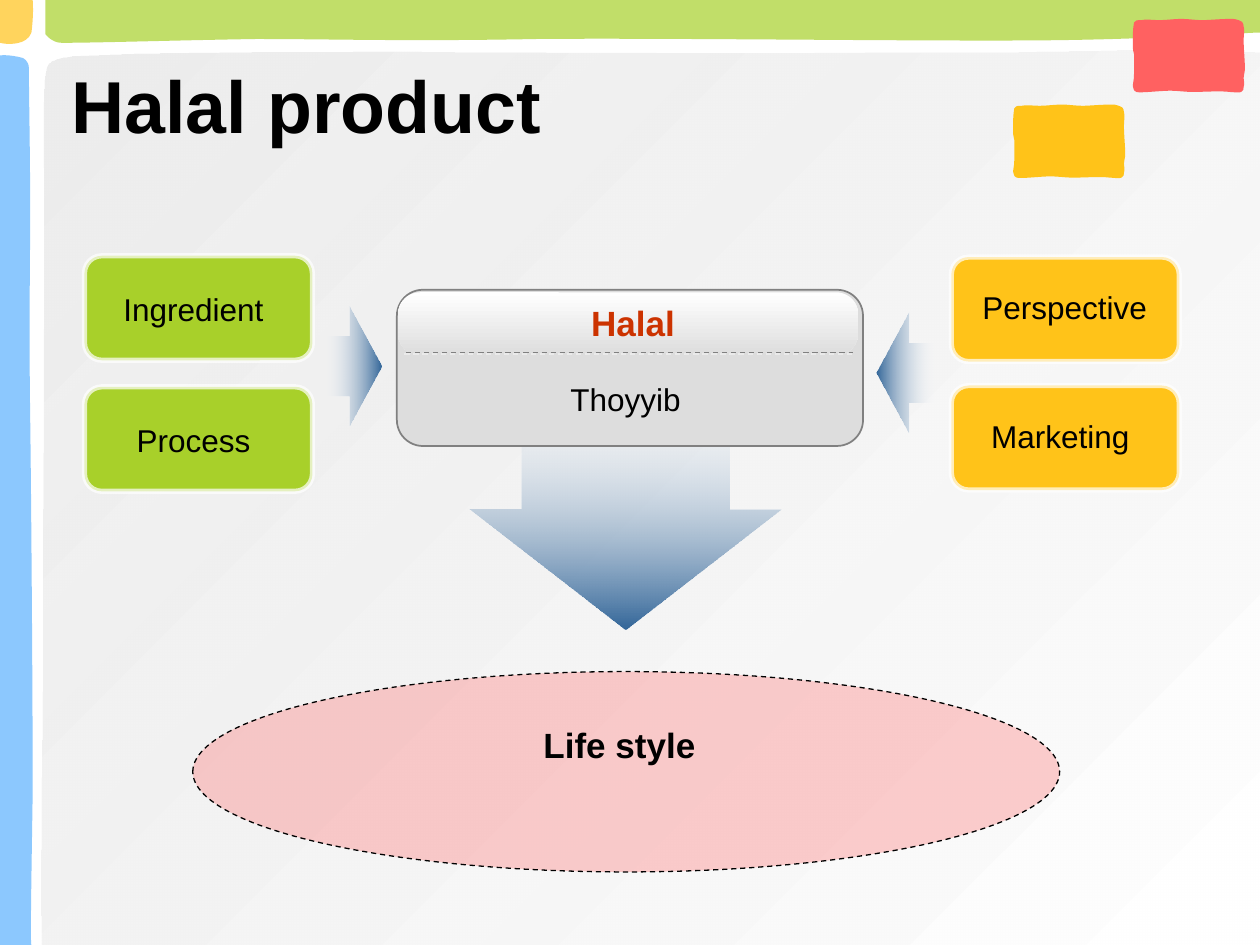
import lxml.etree
import pptx
import pptx.dml.color
import pptx.enum.dml
import pptx.enum.shapes
import pptx.enum.text
import pptx.oxml
import pptx.oxml.ns
import pptx.util

Inches = pptx.util.Inches
RGB = pptx.dml.color.RGBColor
SHAPE = pptx.enum.shapes.MSO_SHAPE
DASH = pptx.enum.dml.MSO_LINE.DASH
ANCHOR = pptx.enum.text.MSO_ANCHOR
ALIGN = pptx.enum.text.PP_ALIGN
qn = pptx.oxml.ns.qn

BLACK, WHITE = RGB(0, 0, 0), RGB(255, 255, 255)
GREEN, AMBER = RGB(0xA8, 0xD0, 0x2A), RGB(0xFF, 0xC3, 0x19)
SKY, CORAL = RGB(0x5C, 0xB1, 0xFE), RGB(0xFF, 0x61, 0x61)
NAVY, RED = RGB(0x33, 0x66, 0x99), RGB(0xCC, 0x33, 0)
MIST, SILVER = RGB(0xE6, 0xE6, 0xE6), RGB(0xDD, 0xDD, 0xDD)
GRAY, PALE = RGB(0x80, 0x80, 0x80), RGB(0xEA, 0xEA, 0xEA)

# Outlines in inches: pairs are corners, sixes are Bezier curves
PANEL = [(10, 7.5), (10, 0.42), (8.86, 0.38, 8.55, 0.42, 7.6, 0.42),
         (6.66, 0.42, 5.5, 0.43, 4.33, 0.42), (3.16, 0.41, 1.23, 0.41, 0.57, 0.45),
         (0.36, 0.48, 0.36, 0.49, 0.35, 0.73), (0.34, 0.96, 0.35, 1.1, 0.35, 1.82),
         (0.35, 2.56, 0.34, 4.12, 0.34, 5.06), (0.34, 6.01, 0.32, 6.62, 0.33, 7.5)]
TOP_BAND = [(10, 0), (10, 0.26), (10.01, 0.25, 9.28, 0.31, 8.32, 0.32),
            (7.36, 0.33, 5.31, 0.3, 4.26, 0.31), (3.21, 0.33, 2.65, 0.31, 2.03, 0.31),
            (1.4, 0.32, 0.77, 0.34, 0.49, 0.34), (0.41, 0.34, 0.36, 0.27, 0.36, 0.27),
            (0.36, 0.27, 0.36, 0.14, 0.36, 0)]
LEFT_BAND = [(0, 7.5), (0.25, 7.5), (0.24, 7.5, 0.25, 6.98, 0.26, 6.28),
             (0.26, 5.58, 0.25, 4.07, 0.24, 3.3), (0.23, 2.54, 0.24, 2.12, 0.24, 1.67),
             (0.24, 1.21, 0.23, 0.75, 0.23, 0.54), (0.23, 0.48, 0.18, 0.46, 0.18, 0.46),
             (0.07, 0.43, 0, 0.44, 0, 0.44)]
CORNER = [(0, 0), (0.26, 0), (0.27, 0.12, 0.25, 0.26, 0.25, 0.26),
          (0.23, 0.31, 0.19, 0.33, 0.15, 0.34), (0.07, 0.36, 0, 0.34, 0, 0.34)]
NOTE = [(0.01, 0.03), (0.02, 0.01, 0.03, 0.01, 0.07, 0.01),
        (0.1, 0, 0.16, 0.01, 0.21, 0.01), (0.26, 0.01, 0.33, 0, 0.39, 0),
        (0.44, 0, 0.5, 0.01, 0.55, 0.01), (0.6, 0.01, 0.7, 0, 0.77, 0),
        (0.8, 0, 0.82, 0, 0.84, 0.01), (0.86, 0.01, 0.88, 0.03, 0.88, 0.06),
        (0.89, 0.09, 0.88, 0.12, 0.88, 0.17), (0.88, 0.23, 0.89, 0.34, 0.89, 0.39),
        (0.89, 0.43, 0.88, 0.44, 0.88, 0.47), (0.88, 0.49, 0.89, 0.52, 0.88, 0.54),
        (0.88, 0.56, 0.88, 0.57, 0.86, 0.58), (0.84, 0.59, 0.8, 0.58, 0.77, 0.58),
        (0.7, 0.57, 0.55, 0.58, 0.48, 0.58), (0.42, 0.58, 0.35, 0.57, 0.3, 0.57),
        (0.22, 0.57, 0.06, 0.59, 0.03, 0.58), (0, 0.57, 0.01, 0.55, 0, 0.53),
        (0, 0.51, 0.01, 0.49, 0.01, 0.44), (0.01, 0.4, 0.01, 0.32, 0.01, 0.28),
        (0, 0.24, 0, 0.23, 0, 0.2), (0, 0.14, 0, 0.08, 0.01, 0.03)]


def set_alpha(color_el, percent):
    if percent < 100:
        lxml.etree.SubElement(color_el, qn("a:alpha")).set("val", str(percent * 1000))


def paint(sp, color, alpha=100):
    sp.shadow.inherit = False
    sp.line.fill.background()
    sp.fill.solid()
    sp.fill.fore_color.rgb = color
    set_alpha(sp._element.spPr.find(qn("a:solidFill"))[0], alpha)


def paint_gradient(sp, start, end, angle):
    """Fill from start to end, each a (colour, alpha) pair; angle runs clockwise."""
    paint(sp, start[0])
    sp.fill.gradient()
    sp.fill.gradient_angle = 360 - angle
    for stop, (color, alpha) in zip(sp.fill.gradient_stops, (start, end)):
        stop.color.rgb = color
    for el, (color, alpha) in zip(sp._element.spPr.iter(qn("a:srgbClr")), (start, end)):
        set_alpha(el, alpha)


def outline(line, color, width, alpha=100, dash=None):
    line.color.rgb = color
    line.width = pptx.util.Pt(width)
    set_alpha(line._ln.find(qn("a:solidFill"))[0], alpha)
    if dash:
        line.dash_style = dash


def add_shape(slide, kind, box, *adjustments):
    sp = slide.shapes.add_shape(kind, *map(Inches, box))
    for i, value in enumerate(adjustments):
        sp.adjustments[i] = value
    return sp


def add_text(slide, box, text, size, color=BLACK, bold=False, align=ALIGN.CENTER,
             anchor=ANCHOR.TOP, wrap=True):
    tf = slide.shapes.add_textbox(*map(Inches, box)).text_frame
    tf.word_wrap = wrap
    tf.vertical_anchor = anchor
    p = tf.paragraphs[0]
    p.alignment = align
    r = p.add_run()
    r.text = text
    r.font.name, r.font.size, r.font.bold = "Arial", pptx.util.Pt(size), bold
    r.font.color.rgb = color


def add_outline(slide, x, y, segments):
    """Draw a closed outline with its origin at x, y, bending the curved sides."""
    corners = [(Inches(x + seg[-2]), Inches(y + seg[-1])) for seg in segments]
    fb = slide.shapes.build_freeform(*corners[0], scale=1.0)
    fb.add_line_segments(corners[1:], close=True)
    sp = fb.convert_to_shape()
    for side, seg in zip(list(sp._element.iter(qn("a:lnTo"))), segments[1:]):
        if len(seg) == 6:
            curve = lxml.etree.Element(qn("a:cubicBezTo"))
            for px, py in zip(seg[::2], seg[1::2]):
                lxml.etree.SubElement(curve, qn("a:pt"), x=str(Inches(x + px) - sp.left),
                                      y=str(Inches(y + py) - sp.top))
            side.getparent().replace(side, curve)
    return sp


def add_frame(slide, x, y):
    """Panel, coloured bands and loose notes behind the content."""
    paint_gradient(add_outline(slide, x, y, PANEL), (MIST, 70), (WHITE, 100), 45)
    for segments, color in ((TOP_BAND, GREEN), (LEFT_BAND, SKY), (CORNER, AMBER)):
        paint(add_outline(slide, x, y, segments), color, 70)
    for dx, dy, color in ((8.99, 0.15, CORAL), (8.04, 0.83, AMBER)):
        paint(add_outline(slide, x + dx, y + dy, NOTE), color)


def add_arrow(slide, box, shaft, head, rotation=0, flip=False):
    sp = add_shape(slide, SHAPE.UP_ARROW, box, shaft, head)
    paint_gradient(sp, (NAVY, 100), (WHITE, 0), 90)
    sp.rotation = rotation
    if flip:
        sp._element.spPr.find(qn("a:xfrm")).set("flipV", "1")


def add_cards(slide, x, y, pitch, labels, color, label_dy):
    """Column of rounded cards with their labels."""
    for i, label in enumerate(labels):
        top = y + i * pitch
        sp = add_shape(slide, SHAPE.ROUNDED_RECTANGLE, (x, top, 1.81, 0.83), 0.167)
        paint(sp, color)
        outline(sp.line, WHITE, 3, alpha=70)
        add_text(slide, (x + 0.14, top + label_dy, 1.52, 0.4), label, 18)


def add_core(slide, x, y, w, h):
    """Central box: glossy heading, dashed divider, second line."""
    sp = add_shape(slide, SHAPE.ROUNDED_RECTANGLE, (x, y, w, h), 0.167)
    paint(sp, SILVER)
    outline(sp.line, GRAY, 1)
    gloss = add_shape(slide, SHAPE.ROUNDED_RECTANGLE, (x + 0.01, y + 0.02, w - 0.05, 0.5), 0.348)
    paint_gradient(gloss, (WHITE, 100), (SILVER, 100), 90)
    add_text(slide, (x + 1.44, y + 0.04, 0.87, 0.44), "Halal", 20, RED, True, wrap=False)
    add_text(slide, (x + 1.27, y + 0.67, 1.16, 0.4), "Thoyyib ", 18, wrap=False)
    ends = (x + 0.06, y + 0.51, x + w - 0.09, y + 0.51)
    divider = slide.shapes.add_connector(pptx.enum.shapes.MSO_CONNECTOR.STRAIGHT, *map(Inches, ends))
    outline(divider.line, PALE, 0.75, dash=DASH)
    effects = lxml.etree.SubElement(divider._element.spPr, qn("a:effectLst"))
    shadow = lxml.etree.SubElement(effects, qn("a:outerShdw"), dist="17780", dir="18900000")
    lxml.etree.SubElement(shadow, qn("a:srgbClr"), val=str(GRAY))


def add_result(slide, x, y, w, h):
    """Dashed ellipse with the outcome."""
    sp = add_shape(slide, SHAPE.OVAL, (x, y, w, h))
    paint(sp, CORAL, 30)
    outline(sp.line, BLACK, 0.75, dash=DASH)
    add_text(slide, (x + 0.25, y + 0.36, 6.35, 0.44), "Life style ", 20, bold=True)


def main():
    prs = pptx.Presentation()
    prs.slide_width, prs.slide_height = Inches(10), Inches(7.5)
    slide = prs.slides.add_slide(prs.slide_layouts[6])
    add_frame(slide, 0, 0)
    add_text(slide, (0.47, 0.31, 7.36, 1.03), "Halal product", 42, bold=True,
             align=ALIGN.LEFT, anchor=ANCHOR.MIDDLE)
    add_arrow(slide, (3.73, 3.01, 2.47, 1.99), 0.666, 0.483, flip=True)
    add_core(slide, 3.15, 2.3, 3.7, 1.24)
    add_result(slide, 1.53, 5.33, 6.88, 1.59)
    add_arrow(slide, (2.32, 2.67, 0.95, 0.47), 0.5, 0.54, rotation=90)
    add_arrow(slide, (6.72, 2.72, 0.95, 0.47), 0.5, 0.54, rotation=270)
    add_cards(slide, 0.67, 2.03, 1.04, ("Ingredient ", "Process "), GREEN, 0.22)
    add_cards(slide, 7.55, 2.04, 1.02, ("Perspective ", "Marketing "), AMBER, 0.2)
    prs.save("out.pptx")


if __name__ == "__main__":
    main()
